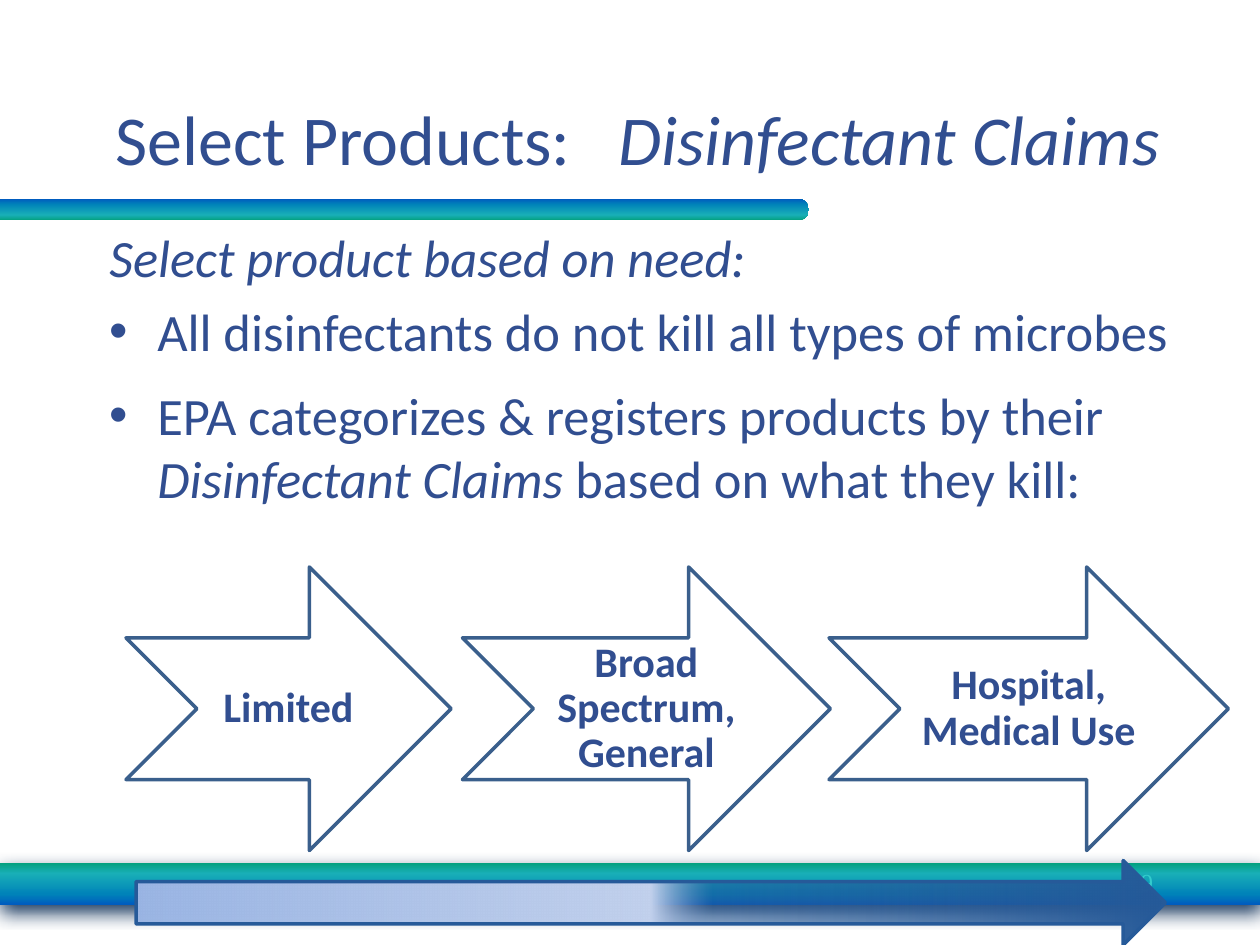
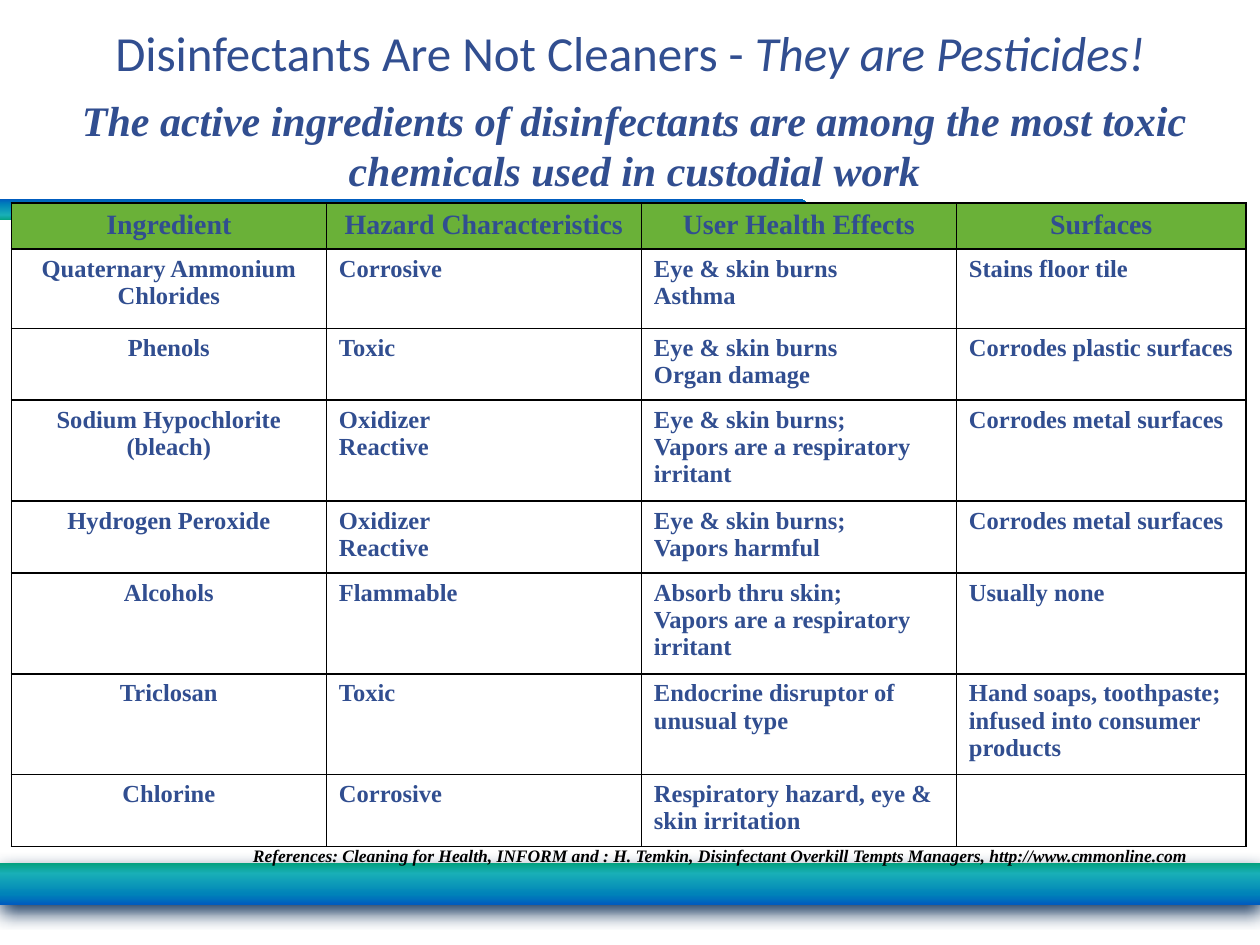
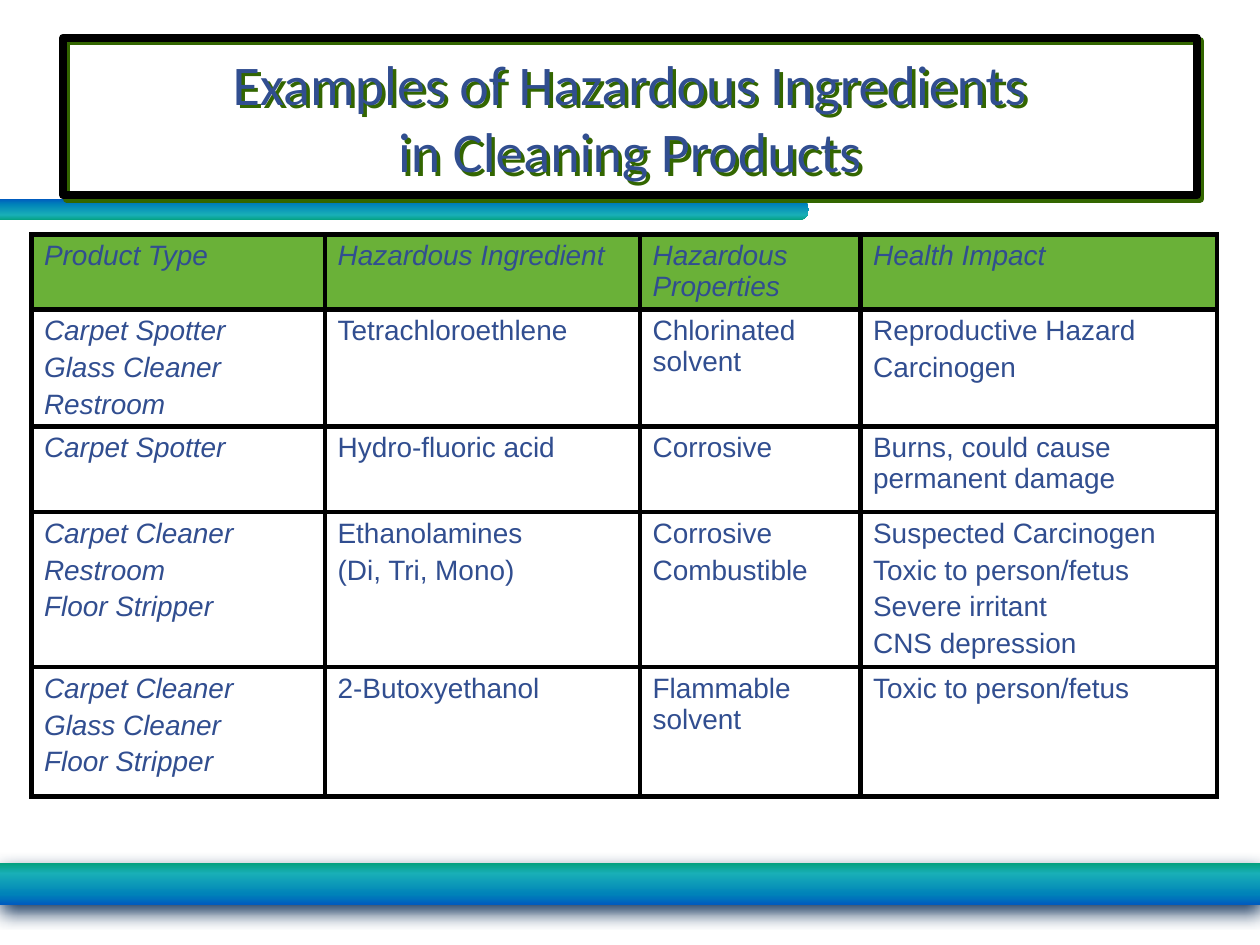
import lxml.etree
import pptx
import pptx.dml.color
import pptx.enum.shapes
import pptx.enum.text
import pptx.oxml
import pptx.oxml.ns
import pptx.util

Inches = pptx.util.Inches
Pt = pptx.util.Pt
qn = pptx.oxml.ns.qn
SHAPE = pptx.enum.shapes.MSO_SHAPE
ANCHOR = pptx.enum.text.MSO_ANCHOR
FIT = pptx.enum.text.MSO_AUTO_SIZE
ALIGN = {
    "left": pptx.enum.text.PP_ALIGN.LEFT,
    "center": pptx.enum.text.PP_ALIGN.CENTER,
    "right": pptx.enum.text.PP_ALIGN.RIGHT,
}
COLORS = {
    "ink": "314E90",
    "white": "FFFFFF",
    "black": "000000",
    "header": "6AB138",
    "outline": "3A5F8C",
    "scale": "265A99",
    "number": "33CCCC",
    "band_shadow": "17375E",
    "title_shadow": "336600",
}
BAND_STOPS = [(0, "02A07E"), (25, "19AFB7"), (75, "0083B9"), (100, "005CBF")]
SCALE_STOPS = [(0, "9AB5E4"), (50, "C2D1ED"), (56, "265A99", 50),
               (100, "265A99"), (100, "E1E8F5")]


def rgb(name):
    return pptx.dml.color.RGBColor.from_string(COLORS[name])


def add_node(parent, tag, **attributes):
    node = lxml.etree.SubElement(parent, qn(tag))
    for key, value in attributes.items():
        node.set(key, str(value))
    return node


def write(frame, text, size=16, face="Calibri", color="ink", bold=False, italic=False,
          align="left", before=0, line=None, indent=0, bullet=None):
    first = not frame.text
    paragraph = frame.paragraphs[0] if first else frame.add_paragraph()
    paragraph.alignment = ALIGN[align]
    paragraph.space_before = Pt(0 if first else before)
    if line:
        paragraph.line_spacing = line
    properties = paragraph._p.get_or_add_pPr()
    if indent:
        properties.set("marL", str(Inches(indent)))
        properties.set("indent", str(-Inches(indent)))
    if bullet:
        add_node(properties, "a:buFont", typeface="Arial")
        add_node(properties, "a:buChar", char=bullet)
    for part, extra in [(text, {})] if isinstance(text, str) else text:
        for number, piece in enumerate(part.split("\n")):
            if number:
                paragraph.add_line_break()
            run = paragraph.add_run()
            run.text = piece
            run.font.size = Pt(size)
            run.font.name = face
            run.font.bold = bold
            run.font.italic = extra.get("italic", italic)
            run.font.color.rgb = rgb(color)
            if "spacing" in extra:
                run._r.get_or_add_rPr().set("spc", str(extra["spacing"] * 100))


def gradient(shape, stops, angle):
    shape.fill.background()
    properties = shape.element.spPr
    blend = lxml.etree.Element(qn("a:gradFill"), rotWithShape="1")
    stop_list = add_node(blend, "a:gsLst")
    for position, color, *alpha in stops:
        stop = add_node(stop_list, "a:gs", pos=position * 1000)
        tint = add_node(stop, "a:srgbClr", val=color)
        if alpha:
            add_node(tint, "a:alpha", val=alpha[0] * 1000)
    add_node(blend, "a:lin", ang=angle * 60000, scaled=0)
    properties.replace(properties.find(qn("a:noFill")), blend)


def cast_shadow(shape, color, blur, distance, angle):
    shape.shadow.inherit = False
    effects = shape.element.spPr.find(qn("a:effectLst"))
    shadow = add_node(effects, "a:outerShdw", blurRad=Pt(blur), dist=Pt(distance),
                      dir=angle * 60000, algn="ctr", rotWithShape=0)
    add_node(shadow, "a:srgbClr", val=COLORS[color])


class Deck:
    def __init__(self):
        self.show = pptx.Presentation()
        self.show.slide_width = Inches(10)
        self.show.slide_height = Inches(7.5)
        self.layout = self.show.slide_layouts[5]
        self.slide = None

    def start(self):
        self.slide = self.show.slides.add_slide(self.layout)

    def bands(self):
        footer = self.shape(SHAPE.RECTANGLE, (0, 6.85, 10, 0.33))
        underline = self.shape(SHAPE.ROUNDED_RECTANGLE, (-0.08, 1.58, 6.5, 0.17))
        underline.adjustments[0] = 0.5
        underline.element.spPr.xfrm.set("flipV", "1")
        cast_shadow(footer, "band_shadow", 10, 4, 90)
        for number, band in enumerate((footer, underline)):
            gradient(band, BAND_STOPS, 90)
            band.element.nvSpPr.cNvPr.set("id", str(20 + number))
            self.layout.shapes.element.append(band.element)

    def title(self, text, box, size):
        heading = self.slide.shapes.title
        heading.left, heading.top, heading.width, heading.height = map(Inches, box)
        frame = heading.text_frame
        frame.auto_size = FIT.NONE
        frame.word_wrap = True
        frame.vertical_anchor = ANCHOR.MIDDLE
        write(frame, text, size=size, align="center")
        return heading

    def text(self, box, fit=FIT.NONE):
        frame = self.slide.shapes.add_textbox(*map(Inches, box)).text_frame
        frame.word_wrap = True
        frame.auto_size = fit
        return frame

    def shape(self, kind, box, fill=None, line=None):
        shape = self.slide.shapes.add_shape(kind, *map(Inches, box))
        shape.shadow.inherit = False
        if fill:
            shape.fill.solid()
            shape.fill.fore_color.rgb = rgb(fill)
        if line:
            shape.line.color.rgb = rgb(line)
            shape.line.width = Pt(2)
        else:
            shape.line.fill.background()
        return shape

    def claim(self, label, left, width):
        arrow = self.shape(SHAPE.NOTCHED_RIGHT_ARROW, (left, 4.5, width, 2.25),
                           "white", "outline")
        arrow.text_frame.word_wrap = True
        arrow.text_frame.vertical_anchor = ANCHOR.MIDDLE
        write(arrow.text_frame, label, size=24, bold=True, align="center", line=0.9)

    def table(self, left, top, widths, heights, rows, border, style):
        box = (left, top, sum(widths), sum(heights))
        table = self.slide.shapes.add_table(len(rows), len(widths), *map(Inches, box)).table
        table.first_row = table.horz_banding = False
        for column, width in zip(table.columns, widths):
            column.width = Inches(width)
        for row, height in zip(table.rows, heights):
            row.height = Inches(height)
        for r, row in enumerate(rows):
            for c, content in enumerate(row):
                cell = table.cell(r, c)
                fill, text_format = style(r, c)
                self.borders(cell, border)
                if fill:
                    cell.fill.solid()
                    cell.fill.fore_color.rgb = rgb(fill)
                else:
                    cell.fill.background()
                for entry in content.split("\n") if content else []:
                    write(cell.text_frame, entry, **text_format)

    def borders(self, cell, width):
        properties = cell._tc.get_or_add_tcPr()
        for side in ("a:lnL", "a:lnR", "a:lnT", "a:lnB"):
            edge = add_node(properties, side, w=Pt(width))
            add_node(add_node(edge, "a:solidFill"), "a:srgbClr", val=COLORS["black"])


def toxic_style(row, column):
    text_format = {"face": "Times New Roman", "bold": True, "size": 14 if row else 16,
                   "align": "left" if row and column else "center"}
    fill = "header" if row == 0 else "white" if column == 0 else None
    return fill, text_format


def hazard_style(row, column):
    text_format = {"face": "Arial", "italic": row == 0 or column == 0, "before": 3.2}
    return None if row else "header", text_format


TOXIC_ROWS = [
    ("Ingredient", "Hazard Characteristics", "User Health Effects", "Surfaces"),
    ("Quaternary Ammonium Chlorides", "Corrosive", "Eye & skin burns\nAsthma",
     "Stains floor tile"),
    ("Phenols", "Toxic", "Eye & skin burns\nOrgan damage", "Corrodes plastic surfaces"),
    ("Sodium Hypochlorite (bleach)", "Oxidizer\nReactive",
     "Eye & skin burns;\nVapors are a respiratory irritant", "Corrodes metal surfaces"),
    ("Hydrogen Peroxide", "Oxidizer\nReactive", "Eye & skin burns;\nVapors harmful",
     "Corrodes metal surfaces"),
    ("Alcohols", "Flammable", "Absorb thru skin;\nVapors are a respiratory irritant",
     "Usually none"),
    ("Triclosan", "Toxic", "Endocrine disruptor of unusual type",
     "Hand soaps, toothpaste; infused into consumer products"),
    ("Chlorine", "Corrosive", "Respiratory hazard, eye & skin irritation", ""),
]
HAZARD_ROWS = [
    ("Product Type", "Hazardous Ingredient", "Hazardous Properties", "Health Impact"),
    ("Carpet Spotter\nGlass Cleaner\nRestroom", "Tetrachloroethlene",
     "Chlorinated solvent", "Reproductive Hazard\nCarcinogen"),
    ("Carpet Spotter", "Hydro-fluoric acid", "Corrosive",
     "Burns, could cause permanent damage"),
    ("Carpet Cleaner\nRestroom\nFloor Stripper", "Ethanolamines\n(Di, Tri, Mono)",
     "Corrosive\nCombustible",
     "Suspected Carcinogen\nToxic to person/fetus\nSevere irritant\nCNS depression"),
    ("Carpet Cleaner\nGlass Cleaner\nFloor Stripper", "2-Butoxyethanol",
     "Flammable solvent", "Toxic to person/fetus"),
]


def claims_slide(deck):
    heading = deck.title([("Select Products:", {}), (" ", {"spacing": 18}),
                          ("Disinfectant Claims", {"italic": True})],
                         (0.06, 0.68, 10, 0.83), 40)
    heading.fill.solid()
    heading.fill.fore_color.rgb = rgb("white")
    needs = deck.text((0.77, 1.74, 9.23, 2.76))
    write(needs, "Select product based on need:", size=30, italic=True, indent=0.38)
    write(needs, "All disinfectants do not kill all types of microbes", size=30,
          before=6, indent=0.38, bullet="•")
    write(needs, [("EPA categorizes & registers products by their ", {}),
                  ("Disinfectant Claims ", {"italic": True}),
                  ("based on what they kill:", {})],
          size=30, before=12, indent=0.38, bullet="•")
    write(deck.text((7.17, 6.83, 2.08, 0.5)), "9", size=14, face="Times New Roman",
          color="number", align="right")
    for label, left, width in (("Limited", 1, 2.58),
                               ("Broad Spectrum, General", 3.67, 2.92),
                               ("Hospital, Medical Use", 6.58, 3.17)):
        deck.claim(label, left, width)
    strength = deck.shape(SHAPE.RIGHT_ARROW, (1.08, 6.83, 8.17, 0.67), line="scale")
    gradient(strength, SCALE_STOPS, 0)


def pesticides_slide(deck):
    deck.title([("Disinfectants Are Not Cleaners - ", {}),
                ("They are Pesticides!", {"italic": True})], (0, 0, 10, 0.83), 28)
    warning = {"face": "Times New Roman", "bold": True, "italic": True, "align": "center"}
    write(deck.text((0.25, 0.7, 9.57, 0.91), FIT.SHAPE_TO_FIT_TEXT),
          "The active ingredients of disinfectants are among the most toxic "
          "chemicals used in custodial work", size=24, **warning)
    write(deck.text((1.42, 6.66, 8.58, 0.27), FIT.SHAPE_TO_FIT_TEXT),
          "References: Cleaning for Health, INFORM and : H. Temkin, Disinfectant "
          "Overkill Tempts Managers, http://www.cmmonline.com",
          size=10, color="black", **warning)
    deck.table(0.09, 1.61, (2.5, 2.5, 2.5, 2.3),
               (0.36, 0.63, 0.57, 0.8, 0.57, 0.8, 0.8, 0.57),
               TOXIC_ROWS, 1, toxic_style)


def ingredients_slide(deck):
    heading = deck.title("Examples of Hazardous Ingredients\nin Cleaning Products",
                         (0.5, 0.3, 9, 1.25), 32)
    frame = heading.text_frame
    frame.margin_left = frame.margin_right = frame.margin_top = frame.margin_bottom = 0
    heading.line.color.rgb = rgb("black")
    heading.line.width = Pt(4.5)
    cast_shadow(heading, "title_shadow", 0, 2.8, 45)
    deck.table(0.25, 1.86, (2.33, 2.5, 1.75, 2.83), (0.59, 0.93, 0.68, 1.23, 1.03),
               HAZARD_ROWS, 3, hazard_style)


def main():
    deck = Deck()
    deck.start()
    deck.bands()
    claims_slide(deck)
    deck.start()
    pesticides_slide(deck)
    deck.start()
    ingredients_slide(deck)
    deck.show.save("out.pptx")


if __name__ == "__main__":
    main()
